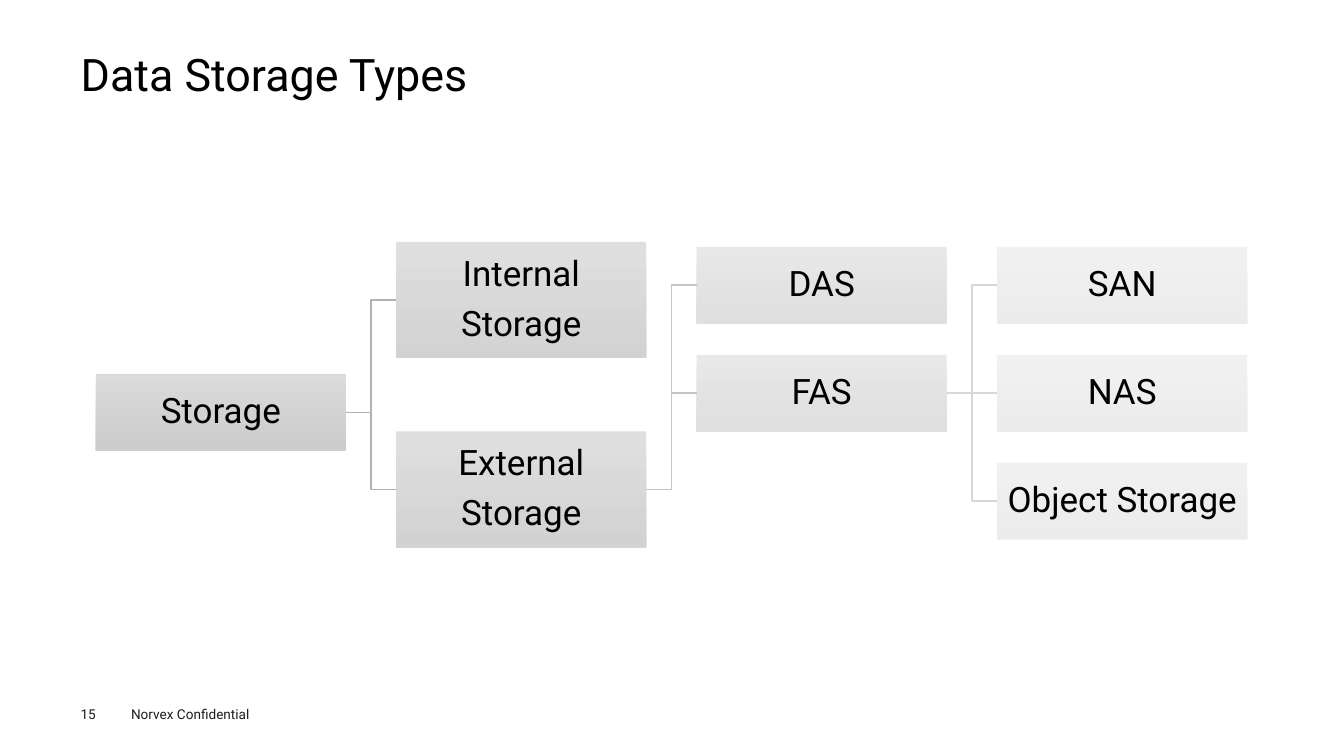
from lxml.etree import SubElement
from pptx import Presentation
from pptx.dml.color import RGBColor
from pptx.enum.shapes import MSO_CONNECTOR as Connector, MSO_SHAPE as Shape
from pptx.enum.text import MSO_ANCHOR as Anchor, MSO_AUTO_SIZE as AutoSize, PP_ALIGN as Align
from pptx.oxml.ns import qn
from pptx.util import Inches, Pt


def color(value):
    return RGBColor.from_string(value)


def write(shape, lines, size, ink, inset=0, anchor=Anchor.MIDDLE, **paragraph_format):
    frame = shape.text_frame
    frame.text = "\n".join(lines)
    frame_format = {"word_wrap": True, "auto_size": AutoSize.NONE, "vertical_anchor": anchor}
    for side in ("left", "top", "right", "bottom"):
        frame_format[f"margin_{side}"] = Inches(inset)
    for name, value in frame_format.items():
        setattr(frame, name, value)
    for paragraph in frame.paragraphs:
        for name, value in paragraph_format.items():
            setattr(paragraph, name, value)
        for run in paragraph.runs:
            run.font.name = "Roboto"
            run.font.size = Pt(size)
            run.font.color.rgb = color(ink)


presentation = Presentation()
presentation.slide_width = Inches(13.33)
presentation.slide_height = Inches(7.5)
slide = presentation.slides.add_slide(presentation.slide_layouts[5])

title = slide.shapes.title
title_format = {"left": 0.8, "top": 0.49, "width": 11.73, "height": 0.54}
for name, value in title_format.items():
    setattr(title, name, Inches(value))
write(title, ["Data Storage Types"], 32, "000000", alignment=Align.LEFT, line_spacing=0.9)

footers = [("15", 0.8, 0.4), ("Norvex Confidential", 1.3, 1.6)]
for text, left, width in footers:
    footer = slide.shapes.add_textbox(Inches(left), Inches(7), Inches(width), Inches(0.16))
    write(footer, [text], 9.7, "1D1D1B", anchor=Anchor.TOP)

first_left, column_pitch, box_width = 0.95, 2.98, 2.48
line_height, extra_line = 0.76, 0.39
level_opacity = [80, 70, 50, 30]
nodes = [
    ("Storage", 0, 3.71),
    ("Internal\nStorage", 1, 2.4),
    ("External\nStorage", 1, 4.28),
    ("DAS", 2, 2.45),
    ("FAS", 2, 3.52),
    ("SAN", 3, 2.45),
    ("NAS", 3, 3.52),
    ("Object Storage", 3, 4.59),
]
boxes = {}
for label, level, top in nodes:
    lines = label.split("\n")
    height = line_height + extra_line * (len(lines) - 1)
    left = first_left + column_pitch * level
    box = slide.shapes.add_shape(
        Shape.RECTANGLE, Inches(left), Inches(top), Inches(box_width), Inches(height))
    box.shadow.inherit = False
    box.line.fill.background()
    box.fill.gradient()
    box.fill.gradient_angle = 270
    for stop, shade in zip(box.fill.gradient_stops, ("D2D2D2", "C0C0C0")):
        stop.color.rgb = color(shade)
    for shade in box._element.spPr.iter(qn("a:srgbClr")):
        SubElement(shade, qn("a:alpha"), val=str(level_opacity[level] * 1000))
    write(box, lines, 25, "000000", inset=0.02,
          alignment=Align.CENTER, line_spacing=0.9, space_after=Pt(9))
    boxes[lines[0]] = box

branches = [
    ("Storage", "B1B1B1", ["Internal", "External"]),
    ("External", "C6C6C6", ["DAS", "FAS"]),
    ("FAS", "D8D8D8", ["SAN", "NAS", "Object Storage"]),
]
right_site, left_site = 3, 1
for parent, shade, children in branches:
    for child in children:
        level_with_parent = boxes[parent].top == boxes[child].top
        kind = Connector.STRAIGHT if level_with_parent else Connector.ELBOW
        branch = slide.shapes.add_connector(kind, 0, 0, 0, 0)
        branch.begin_connect(boxes[parent], right_site)
        branch.end_connect(boxes[child], left_site)
        branch.line.color.rgb = color(shade)
        branch.line.width = Pt(1)
        SubElement(branch._element.spPr, qn("a:effectLst"))

presentation.save("out.pptx")
